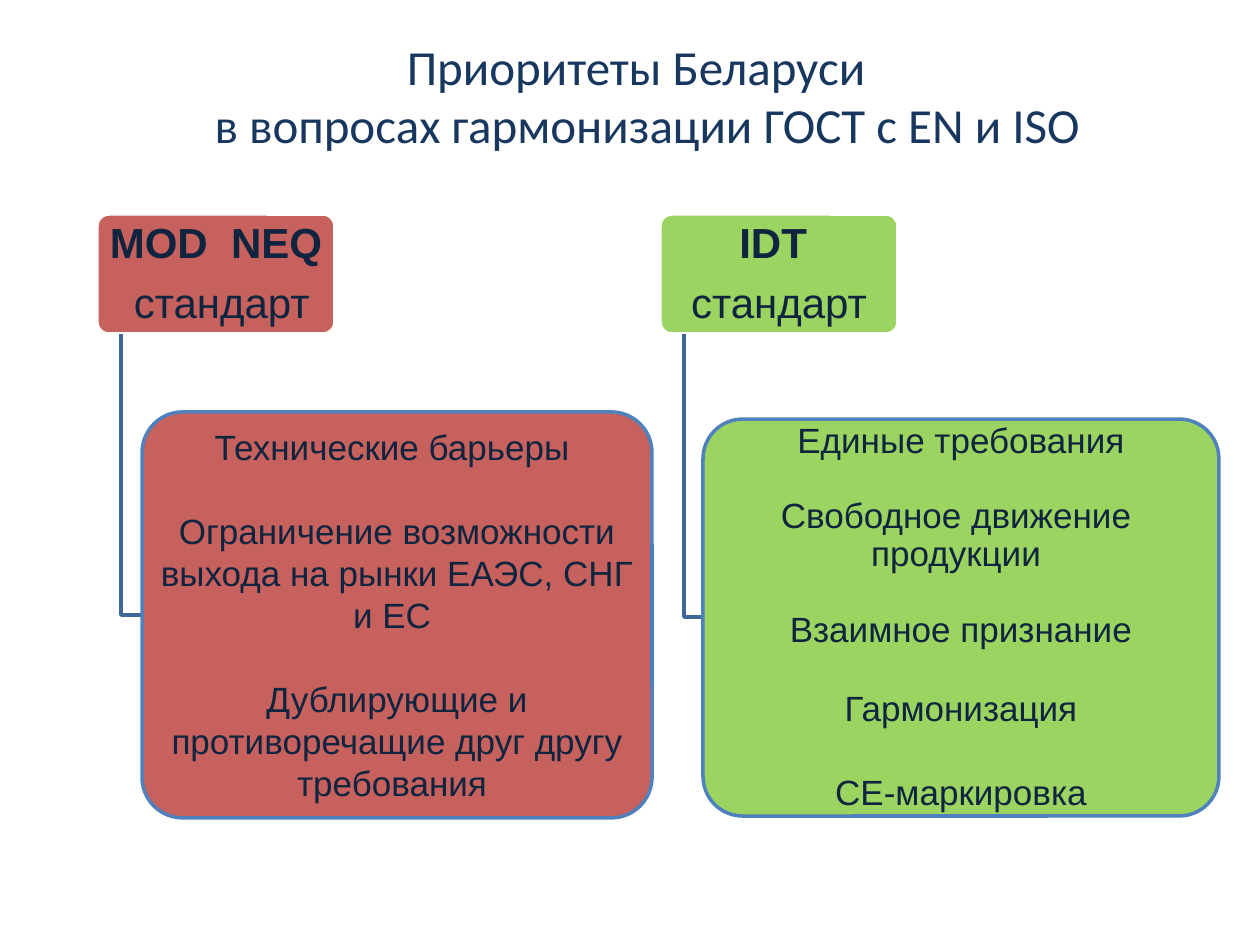
import pptx
import pptx.util
import pptx.dml.color
import pptx.enum.shapes
import pptx.enum.text
import pptx.oxml.ns
import lxml.etree

PX = 914400 / 126
COLORS = {"title": "17375E", "text": "0F243E", "barrier": "C0504D",
          "harmony": "92D050", "outline": "4F81BD", "branch": "3F6797",
          "white": "FFFFFF"}


def px(value):
    return pptx.util.Emu(round(value * PX))


def add_card(box, fill, outline, size, lines):
    """Rounded card; each line is (text, bold, line height, space before)."""
    card = slide.shapes.add_shape(
        pptx.enum.shapes.MSO_SHAPE.ROUNDED_RECTANGLE, *map(px, box))
    card.adjustments[0] = 0.1
    card.shadow.inherit = False
    card.fill.solid()
    card.fill.fore_color.rgb = rgb[fill]
    color = card.fill._xPr.find(".//" + pptx.oxml.ns.qn("a:srgbClr"))
    lxml.etree.SubElement(color, pptx.oxml.ns.qn("a:alpha"), val="90000")
    card.line.color.rgb = rgb[outline]
    card.line.width = pptx.util.Pt(2)
    frame = card.text_frame
    frame.word_wrap = True
    frame.vertical_anchor = pptx.enum.text.MSO_ANCHOR.MIDDLE
    # The rounded corners already inset the text area
    frame.margin_left = frame.margin_right = px(3)
    frame.margin_top = frame.margin_bottom = 0
    frame.text = "\n".join(line[0] for line in lines)
    for paragraph, (_, bold, height, before) in zip(frame.paragraphs, lines):
        paragraph.alignment = pptx.enum.text.PP_ALIGN.CENTER
        paragraph.line_spacing = pptx.util.Pt(height)
        paragraph.space_before = pptx.util.Pt(before)
        for run in paragraph.runs:
            run.font.name = "Arial"
            run.font.size = pptx.util.Pt(size)
            run.font.bold = bold
            run.font.color.rgb = rgb["text"]


rgb = {name: pptx.dml.color.RGBColor.from_string(code)
       for name, code in COLORS.items()}
deck = pptx.Presentation()
deck.slide_width, deck.slide_height = px(1260), px(945)
slide = deck.slides.add_slide(deck.slide_layouts[5])

# Title
title = slide.shapes.title
title.left, title.top, title.width, title.height = map(px, (69, 0, 1134, 130))
heading = title.text_frame
heading.auto_size = pptx.enum.text.MSO_AUTO_SIZE.NONE
heading.vertical_anchor = pptx.enum.text.MSO_ANCHOR.TOP
heading.margin_top = px(36)
heading.text = "Приоритеты Беларуси\nв вопросах гармонизации ГОСТ с EN и ISO"
for paragraph in heading.paragraphs:
    paragraph.alignment = pptx.enum.text.PP_ALIGN.CENTER
    paragraph.space_before = pptx.util.Pt(0)
    font = paragraph.runs[0].font
    font.name, font.size = "Calibri", pptx.util.Pt(28)
    font.color.rgb = rgb["title"]
heading.paragraphs[1]._p.get_or_add_pPr().set("marL", str(px(22)))

# Two kinds of standard: left edge, colour, heading, consequences box and text
standards = [
    (97, "barrier", ("MOD  NEQ", " стандарт"), (142, 412, 510, 406), [
        ("Технические барьеры ", False, 24, 0),
        ("Ограничение возможности выхода на рынки ЕАЭС, СНГ и ЕC ", False, 24, 24),
        ("Дублирующие и противоречащие друг другу требования ", False, 24, 24)]),
    (660, "harmony", ("IDТ ", "стандарт"), (703, 419, 516, 397), [
        ("Единые требования", False, 21.6, 0),
        ("Свободное движение \vпродукции ", False, 21.6, 21.6),
        ("Взаимное признание", False, 21.6, 21.6),
        ("Гармонизация", False, 24, 21.6),
        ("СЕ-маркировка", False, 24, 24)]),
]
for left, color, (code, noun), effects_box, effects in standards:
    add_card((left, 214, 238, 120), color, "white", 24,
             [(code, True, 26, 0), (noun, False, 26, 8.4)])

    # Branch from the heading down to the consequences
    trunk = left + 24
    middle = effects_box[1] + effects_box[3] // 2
    builder = slide.shapes.build_freeform(trunk, 334, scale=PX)
    builder.add_line_segments([(trunk, middle), (effects_box[0], middle)],
                              close=False)
    branch = builder.convert_to_shape()
    branch.shadow.inherit = False
    branch.fill.background()
    branch.line.color.rgb = rgb["branch"]
    branch.line.width = pptx.util.Pt(2)

    add_card(effects_box, color, "outline", 20, effects)

deck.save("out.pptx")
